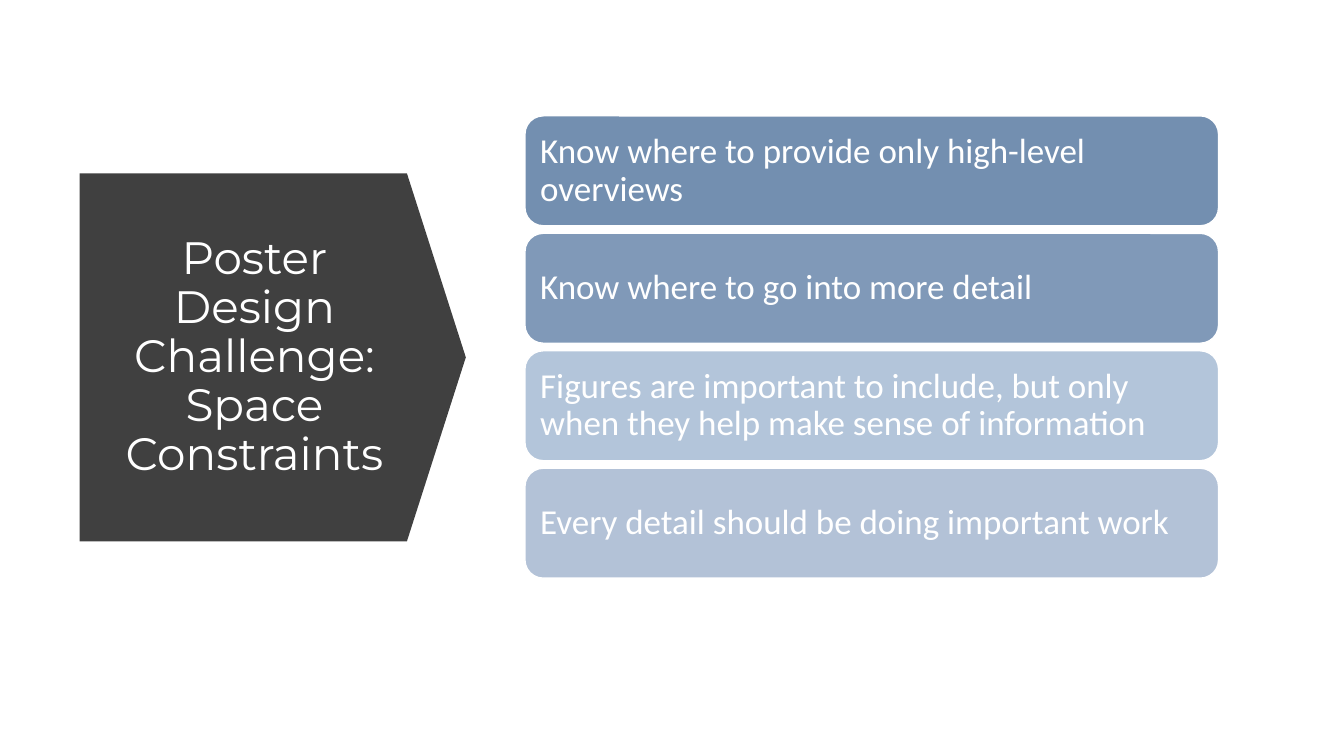
from pptx import Presentation
from pptx import util as u
from pptx.dml.color import RGBColor
from pptx.enum import shapes, text

TITLE = "Poster Design Challenge: Space Constraints"
CARDS = [
    ("Know where to provide only high-level overviews", "738FB0"),
    ("Know where to go into more detail", "8099B8"),
    ("Figures are important to include, but only when they help make sense of information", "B3C5DA"),
    ("Every detail should be doing important work", "B3C2D7"),
]
WHITE = "FFFFFF"
CARD_LEFT, CARD_TOP, CARD_WIDTH, CARD_HEIGHT, CARD_STEP = 13.23, 2.92, 17.48, 2.77, 2.96


def paint(color_format, color):
    color_format.rgb = RGBColor.from_string(color)


def add_panel(page, kind, place, fill, words, font, size, align, insets):
    panel = page.shapes.add_shape(kind, *[u.Cm(length) for length in place])
    panel.shadow.inherit = False
    panel.fill.solid()
    paint(panel.fill.fore_color, fill)
    frame = panel.text_frame
    frame.word_wrap = True
    frame.vertical_anchor = text.MSO_ANCHOR.MIDDLE
    frame.margin_left, frame.margin_right = [u.Cm(inset) for inset in insets]
    para = frame.paragraphs[0]
    para.alignment = align
    para.line_spacing = 0.9
    span = para.add_run()
    span.text = words
    span.font.name = font
    span.font.size = u.Pt(size)
    paint(span.font.color, WHITE)
    return panel


deck = Presentation()
deck.slide_width, deck.slide_height = u.Cm(33.87), u.Cm(19.05)
page = deck.slides.add_slide(deck.slide_layouts[6])

pointer = add_panel(page, shapes.MSO_SHAPE.PENTAGON, (2.01, 4.37, 9.73, 9.27), "404040",
                    TITLE, "Montserrat", 32.4, text.PP_ALIGN.CENTER, (0.71, 0.89))
pointer.adjustments[0] = 0.16
pointer.line.fill.background()

for index, (words, fill) in enumerate(CARDS):
    place = (CARD_LEFT, CARD_TOP + index * CARD_STEP, CARD_WIDTH, CARD_HEIGHT)
    card = add_panel(page, shapes.MSO_SHAPE.ROUNDED_RECTANGLE, place, fill,
                     words, "Calibri", 25, text.PP_ALIGN.LEFT, (0.25, 0.25))
    paint(card.line.color, WHITE)
    card.line.width = u.Pt(1)

deck.save("out.pptx")
